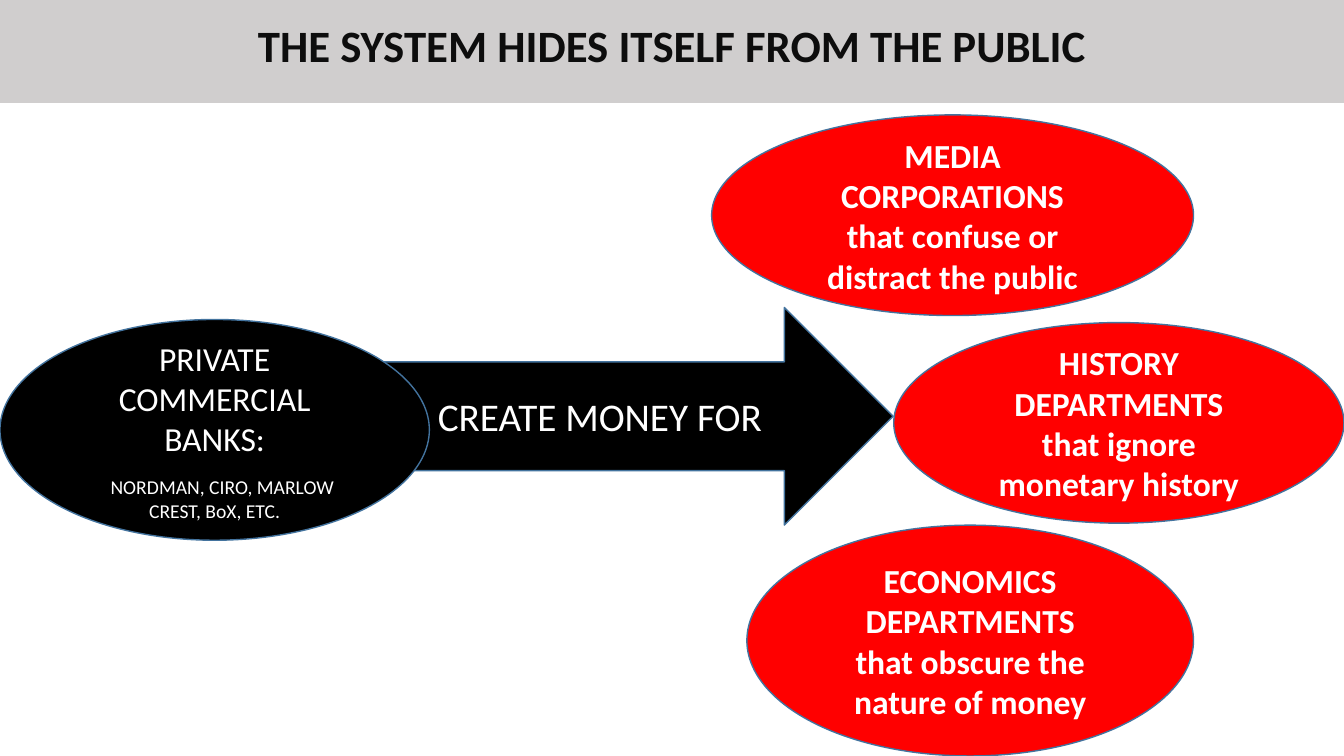
from pptx import Presentation
from pptx.dml.color import RGBColor
from pptx.enum.shapes import MSO_SHAPE
from pptx.enum.text import MSO_ANCHOR, PP_ALIGN
from pptx.util import Pt

COLORS = {
    "banner": "D0CECE",
    "title": "0D0D0D",
    "bank": "000000",
    "recipient": "FF0000",
    "outline": "43739E",
    "text": "FFFFFF",
}


class SlideBuilder:
    def __init__(self, slide, font_name="Calibri"):
        self.slide = slide
        self.font_name = font_name

    def color(self, name):
        return RGBColor.from_string(COLORS[name])

    def block(self, kind, box, fill, outline="outline"):
        shape = self.slide.shapes.add_shape(kind, *(Pt(value) for value in box))
        shape.shadow.inherit = False
        shape.fill.solid()
        shape.fill.fore_color.rgb = self.color(fill)
        if outline:
            shape.line.color.rgb = self.color(outline)
            shape.line.width = Pt(1)
        else:
            shape.line.fill.background()
        shape.text_frame.word_wrap = True
        shape.text_frame.vertical_anchor = MSO_ANCHOR.MIDDLE
        return shape

    def set_text(self, shape, lines, size, bold=False, color="text"):
        shape.text_frame.text = "\n".join(lines)
        for paragraph in shape.text_frame.paragraphs:
            paragraph.alignment = PP_ALIGN.CENTER
            paragraph.font.name = self.font_name
            paragraph.font.size = Pt(size)
            paragraph.font.bold = bold
            paragraph.font.color.rgb = self.color(color)

    def banner(self, box, title):
        shape = self.block(MSO_SHAPE.RECTANGLE, box, "banner", outline=None)
        self.set_text(shape, [title], 32, bold=True, color="title")
        shape.text_frame.paragraphs[0].line_spacing = 0.9

    def arrow(self, box, label):
        shape = self.block(MSO_SHAPE.RIGHT_ARROW, box, "bank")
        self.set_text(shape, [label], 28)

    def recipient(self, box, lines):
        shape = self.block(MSO_SHAPE.OVAL, box, "recipient")
        self.set_text(shape, lines, 24, bold=True)

    def banks(self, box, heading, examples):
        shape = self.block(MSO_SHAPE.OVAL, box, "bank")
        self.set_text(shape, [heading, examples], 24)
        paragraph = shape.text_frame.paragraphs[1]
        paragraph.font.size = Pt(14)
        paragraph.space_before = Pt(12)
        # First-line indent
        paragraph._p.get_or_add_pPr().set("indent", str(Pt(11)))


def main():
    presentation = Presentation()
    presentation.slide_width = Pt(960)
    presentation.slide_height = Pt(540)
    slide = presentation.slides.add_slide(presentation.slide_layouts[6])
    builder = SlideBuilder(slide)

    # Arrow behind the ovals, then the title banner
    builder.arrow((257.8, 219.6, 380.2, 155.5), "CREATE MONEY FOR")
    builder.banner((0, -5, 960, 78.5), "THE SYSTEM HIDES ITSELF FROM THE PUBLIC")

    # Recipients of the money
    recipients = [
        ((533.5, 375.1, 319, 164.9),
         ["ECONOMICS DEPARTMENTS", "that obscure the nature of money"]),
        ((638.4, 230.4, 321.6, 143.3),
         ["HISTORY DEPARTMENTS", "that ignore", "monetary history"]),
        ((508.3, 82.1, 344.2, 143.3),
         ["MEDIA CORPORATIONS", "that confuse or distract the public"]),
    ]
    for box, lines in recipients:
        builder.recipient(box, lines)

    # Source of the money
    builder.banks((0, 228.2, 306.7, 157.7), "PRIVATE COMMERCIAL BANKS:",
                  "NORDMAN, CIRO, MARLOW CREST, BoX, ETC.")

    presentation.save("out.pptx")


if __name__ == "__main__":
    main()
